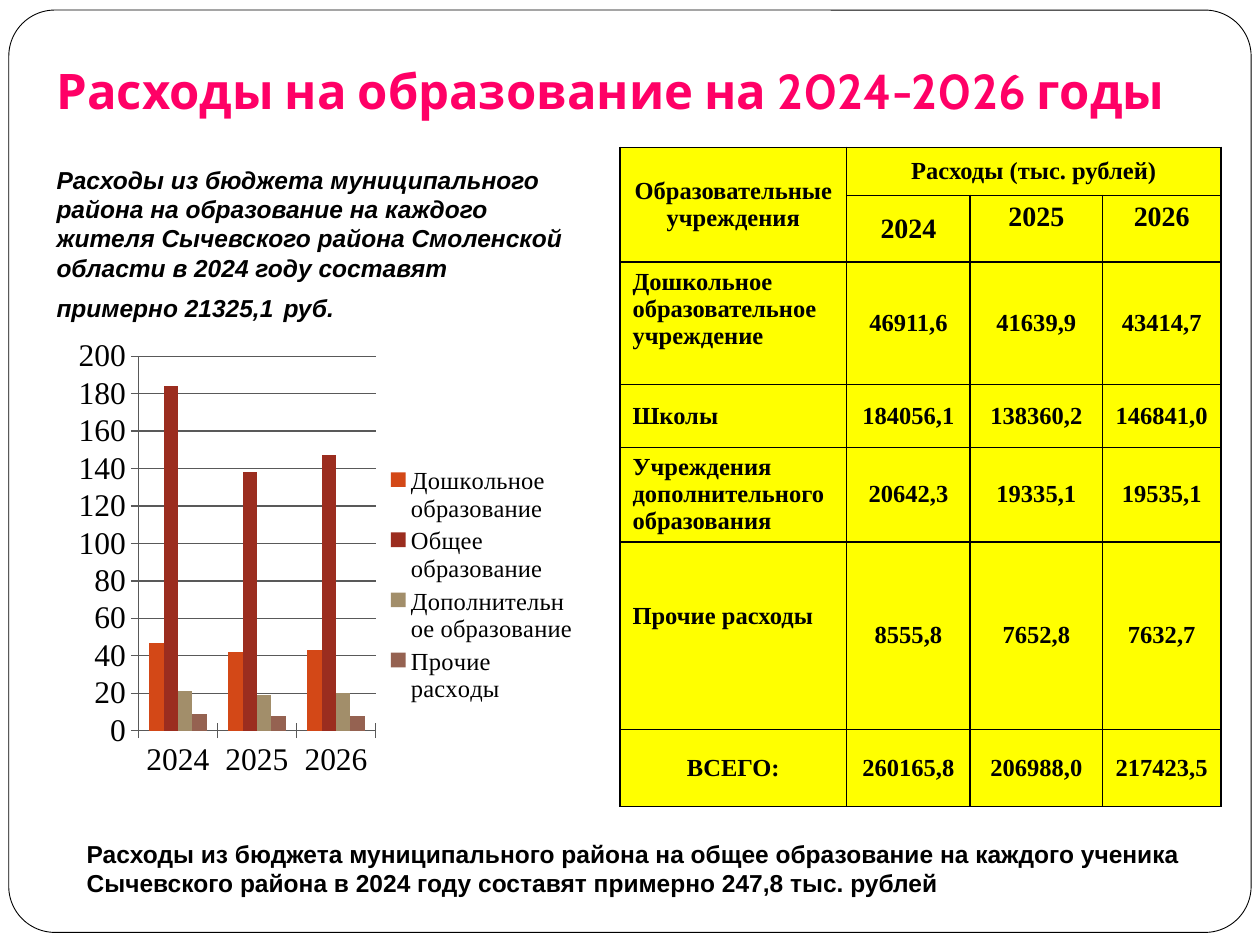
from dataclasses import dataclass

from lxml.etree import SubElement
from pptx import Presentation
from pptx.chart.data import CategoryChartData
from pptx.dml.color import RGBColor
from pptx.enum.chart import XL_CHART_TYPE, XL_LEGEND_POSITION, XL_TICK_MARK
from pptx.enum.shapes import MSO_SHAPE
from pptx.enum.text import MSO_ANCHOR, MSO_AUTO_SIZE, PP_ALIGN
from pptx.oxml import parse_xml
from pptx.oxml.ns import nsdecls, qn
from pptx.util import Inches, Pt


@dataclass(frozen=True)
class Theme:
    ink: str = "000000"
    paper: str = "FFFFFF"
    accent: str = "FF0066"
    cell: str = "FFFF00"
    grid: str = "595959"
    series: tuple = ("D34817", "9B2D1F", "A28E6A", "956251")
    heading: str = "Cabin"
    body: str = "Arial"
    figures: str = "Times New Roman"
    title_size: int = 28
    axis_size: int = 18
    year_size: int = 16
    text_size: int = 14
    spacer_size: int = 20


def style_font(font, family, size, color, bold=False, italic=False):
    font.name, font.size = family, Pt(size)
    font.bold, font.italic = bold, italic
    font.color.rgb = RGBColor.from_string(color)


def write(frame, *paragraphs, family, size, color, bold=True, italic=False,
          align=PP_ALIGN.LEFT, anchor=MSO_ANCHOR.MIDDLE):
    frame.word_wrap = True
    frame.vertical_anchor = anchor
    for index, content in enumerate(paragraphs):
        paragraph = frame.add_paragraph() if index else frame.paragraphs[0]
        paragraph.alignment = align
        pieces = [(content, size)] if isinstance(content, str) else content
        for wording, piece_size in pieces:
            run = paragraph.add_run()
            run.text = wording
            style_font(run.font, family, piece_size, color, bold, italic)


class Page:
    COLUMNS, ROWS = 100, 75

    def __init__(self, deck, theme):
        self.deck, self.theme = deck, theme
        self.slide = deck.slides.add_slide(deck.slide_layouts[5])
        self.shapes = self.slide.shapes

    def across(self, columns):
        return round(self.deck.slide_width * columns / self.COLUMNS)

    def down(self, rows):
        return round(self.deck.slide_height * rows / self.ROWS)

    def area(self, left, top, width, height):
        return (self.across(left), self.down(top),
                self.across(width), self.down(height))

    def frame(self, area):
        border = self.shapes.add_shape(MSO_SHAPE.ROUNDED_RECTANGLE, *self.area(*area))
        border.adjustments[0] = 0.05
        border.shadow.inherit = False
        border.fill.solid()
        border.fill.fore_color.rgb = RGBColor.from_string(self.theme.paper)
        border.line.color.rgb = RGBColor.from_string(self.theme.ink)
        border.line.width = Pt(0.5)
        self.shapes.title.element.addprevious(border.element)

    def title(self, wording, area):
        heading = self.shapes.title
        heading.left, heading.top, heading.width, heading.height = self.area(*area)
        heading.text_frame.auto_size = MSO_AUTO_SIZE.NONE
        heading.text_frame.margin_bottom = Inches(0.1)
        write(heading.text_frame, wording, family=self.theme.heading,
              size=self.theme.title_size, color=self.theme.accent,
              align=PP_ALIGN.CENTER, anchor=MSO_ANCHOR.BOTTOM)

    def note(self, wording, area, italic=False):
        note = self.shapes.add_textbox(*self.area(*area))
        write(note.text_frame, wording, family=self.theme.body,
              size=self.theme.text_size, color=self.theme.ink, italic=italic)

    def cell(self, cell, *paragraphs, size=None, **layout):
        write(cell.text_frame, *paragraphs, family=self.theme.figures,
              size=size or self.theme.text_size, color=self.theme.ink, **layout)
        cell.vertical_anchor = layout.get("anchor", MSO_ANCHOR.MIDDLE)

    def table(self, area, widths, heights):
        table = self.shapes.add_table(len(heights), len(widths), *self.area(*area)).table
        for column, width in zip(table.columns, widths):
            column.width = self.across(width)
        for row, height in zip(table.rows, heights):
            row.height = self.down(height)
        for cell in table.iter_cells():
            cell.fill.solid()
            cell.fill.fore_color.rgb = RGBColor.from_string(self.theme.cell)
            properties = cell._tc.get_or_add_tcPr()
            for position, side in enumerate(("lnL", "lnR", "lnT", "lnB")):
                properties.insert(position, parse_xml(
                    f'<a:{side} {nsdecls("a")} w="12700"><a:solidFill>'
                    f'<a:srgbClr val="{self.theme.ink}"/></a:solidFill></a:{side}>'))
        return table

    def column_chart(self, area, years, spending, plot):
        data = CategoryChartData()
        data.categories = years
        for name, values in spending.items():
            data.add_series(name, values)
        chart = self.shapes.add_chart(
            XL_CHART_TYPE.COLUMN_CLUSTERED, *self.area(*area), data).chart
        theme = self.theme
        style_font(chart.font, theme.figures, theme.axis_size, theme.ink)
        chart.has_title = False
        chart.has_legend = True
        chart.legend.position = XL_LEGEND_POSITION.RIGHT
        chart.legend.include_in_layout = False
        style_font(chart.legend.font, theme.figures, theme.text_size, theme.ink)
        bars = chart.plots[0]
        bars.vary_by_categories = False
        bars.gap_width, bars.overlap = 150, 0
        for series, color in zip(bars.series, theme.series):
            series.format.fill.solid()
            series.format.fill.fore_color.rgb = RGBColor.from_string(color)
        scale = chart.value_axis
        scale.minimum_scale, scale.maximum_scale, scale.major_unit = 0, 200, 20
        scale.has_major_gridlines = True
        for line in (scale.major_gridlines.format.line, scale.format.line,
                     chart.category_axis.format.line):
            line.color.rgb = RGBColor.from_string(theme.grid)
            line.width = Pt(0.75)
        for axis in (scale, chart.category_axis):
            axis.major_tick_mark = XL_TICK_MARK.CROSS
        plot_area = chart._chartSpace.chart.plotArea
        for old in plot_area.findall(qn("c:layout")):
            plot_area.remove(old)
        layout = parse_xml(f'<c:layout {nsdecls("c")}><c:manualLayout/></c:layout>')
        settings = {"layoutTarget": "inner", "xMode": "edge", "yMode": "edge",
                    **dict(zip("xywh", plot))}
        for key, value in settings.items():
            SubElement(layout[0], qn(f"c:{key}")).set("val", str(value))
        plot_area.insert(0, layout)


def fill_spending(page, table, years):
    center, justify = PP_ALIGN.CENTER, PP_ALIGN.JUSTIFY
    table.cell(0, 0).merge(table.cell(1, 0))
    table.cell(0, 1).merge(table.cell(0, 3))
    page.cell(table.cell(0, 0), "Образовательные учреждения", align=center)
    page.cell(table.cell(0, 1), "Расходы (тыс. рублей)", align=center)
    for column, year in enumerate(years, 1):
        page.cell(table.cell(1, column), year, size=page.theme.year_size, align=center,
                  anchor=MSO_ANCHOR.MIDDLE if column == 1 else MSO_ANCHOR.TOP)
    top = MSO_ANCHOR.TOP
    institutions = [
        (["Дошкольное образовательное учреждение"], {"align": justify, "anchor": top},
         "46911,6 41639,9 43414,7"),
        (["Школы"], {"align": justify}, "184056,1 138360,2 146841,0"),
        (["Учреждения", "дополнительного", "образования"], {"align": justify},
         "20642,3 19335,1 19535,1"),
        (["Прочие расходы"], {"anchor": top}, "8555,8 7652,8 7632,7"),
        (["ВСЕГО:"], {"align": center}, "260165,8 206988,0 217423,5"),
    ]
    for row, (name, layout, amounts) in enumerate(institutions, 2):
        page.cell(table.cell(row, 0), *name, **layout)
        for column, amount in enumerate(amounts.split(), 1):
            page.cell(table.cell(row, column), amount, align=center)
    table.cell(5, 0).margin_top = Inches(0.48)


def main():
    deck = Presentation()
    deck.slide_width, deck.slide_height = Inches(10), Inches(7.5)
    theme = Theme()
    page = Page(deck, theme)
    years = ["2024", "2025", "2026"]

    page.frame((0.7, 0.8, 98.6, 73.2))
    page.title("Расходы на образование на 2024-2026 годы", (0, 2.8, 96.9, 7.7))
    table = page.table((49.2, 11.7, 47.7, 52.3), (18, 9.8, 10.5, 9.4),
                       (3.8, 5.3, 9.7, 5, 7.5, 14.9, 6.1))
    fill_spending(page, table, years)
    page.note([("Расходы из бюджета муниципального района на образование на каждого "
                "жителя Сычевского района Смоленской области в 2024 году составят "
                "примерно 21325,1", theme.text_size),
               (" ", theme.spacer_size), ("руб.", theme.text_size)],
              (3.5, 12.3, 42.5, 14.2), italic=True)
    page.note("Расходы из бюджета муниципального района на общее образование на каждого "
              "ученика Сычевского района в 2024 году составят примерно 247,8 тыс. рублей",
              (5.9, 66.6, 90, 4.6))
    page.column_chart((3.1, 25.8, 43.8, 41.3), years, {
        "Дошкольное образование": (47, 42, 43),
        "Общее образование": (184, 138, 147),
        "Дополнительное образование": (21, 19, 20),
        "Прочие расходы": (9, 8, 8),
    }, plot=(0.18, 0.06, 0.43, 0.72))
    deck.save("out.pptx")


if __name__ == "__main__":
    main()
